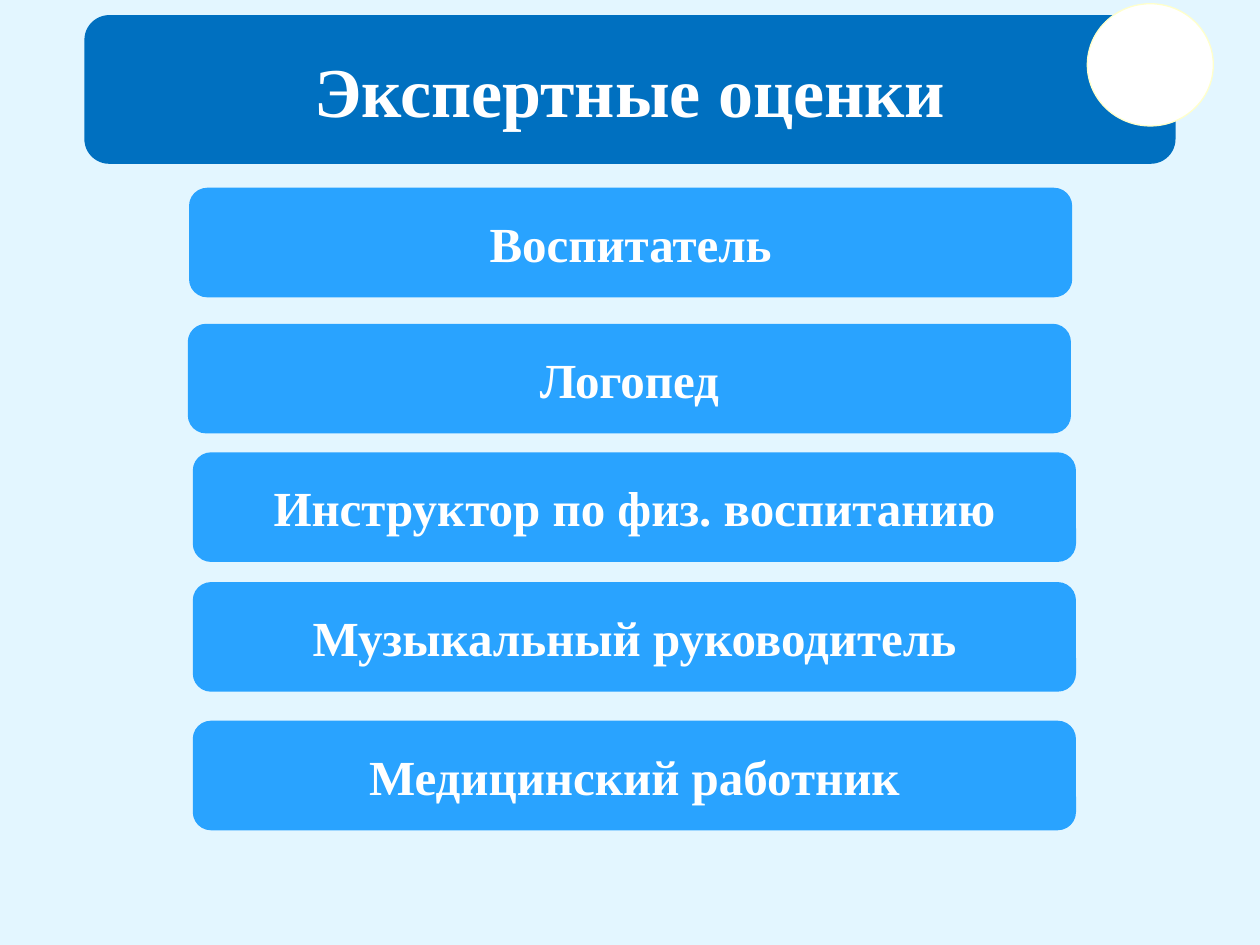
from pptx import Presentation
from pptx.dml.color import RGBColor
from pptx.enum.shapes import MSO_SHAPE
from pptx.enum.text import MSO_ANCHOR, PP_ALIGN
from pptx.util import Inches, Pt

COLORS = {
    "back": "E3F6FF",
    "title": "0070C0",
    "bar": "29A3FF",
    "white": "FFFFFF",
    "rim": "FFFFCC",
}


class Deck:
    font = {"name": "Times New Roman", "bold": True}

    def __init__(self, slide):
        self.slide = slide
        self.paint(slide.background.fill, "back")

    def paint(self, fill, color):
        fill.solid()
        fill.fore_color.rgb = RGBColor.from_string(COLORS[color])

    def shape(self, kind, box, color):
        item = self.slide.shapes.add_shape(kind, *map(Inches, box))
        item.shadow.inherit = False
        self.paint(item.fill, color)
        return item

    def bar(self, text, box, color, size):
        item = self.shape(MSO_SHAPE.ROUNDED_RECTANGLE, box, color)
        item.line.fill.background()
        frame = item.text_frame
        frame.word_wrap = True
        frame.vertical_anchor = MSO_ANCHOR.MIDDLE
        para = frame.paragraphs[0]
        para.alignment = PP_ALIGN.CENTER
        run = para.add_run()
        run.text = text
        for key, value in {**self.font, "size": Pt(size)}.items():
            setattr(run.font, key, value)
        self.paint(run.font.fill, "white")

    def disc(self, box):
        item = self.shape(MSO_SHAPE.OVAL, box, "white")
        self.paint(item.line.fill, "rim")
        item.line.width = Pt(0.75)


def main():
    prs = Presentation()
    prs.slide_width, prs.slide_height = Inches(10), Inches(7.5)
    deck = Deck(prs.slides.add_slide(prs.slide_layouts[6]))
    deck.bar("Экспертные оценки", (0.67, 0.12, 8.66, 1.18), "title", 40)
    roles = [
        ("Воспитатель", 1.5, 1.49),
        ("Логопед", 1.49, 2.57),
        ("Инструктор по физ. воспитанию", 1.53, 3.59),
        ("Музыкальный руководитель", 1.53, 4.62),
        ("Медицинский работник", 1.53, 5.72),
    ]
    for role, left, top in roles:
        deck.bar(role, (left, top, 7.01, 0.87), "bar", 28)
    deck.disc((8.63, 0.03, 1, 0.97))
    prs.save("out.pptx")


if __name__ == "__main__":
    main()
